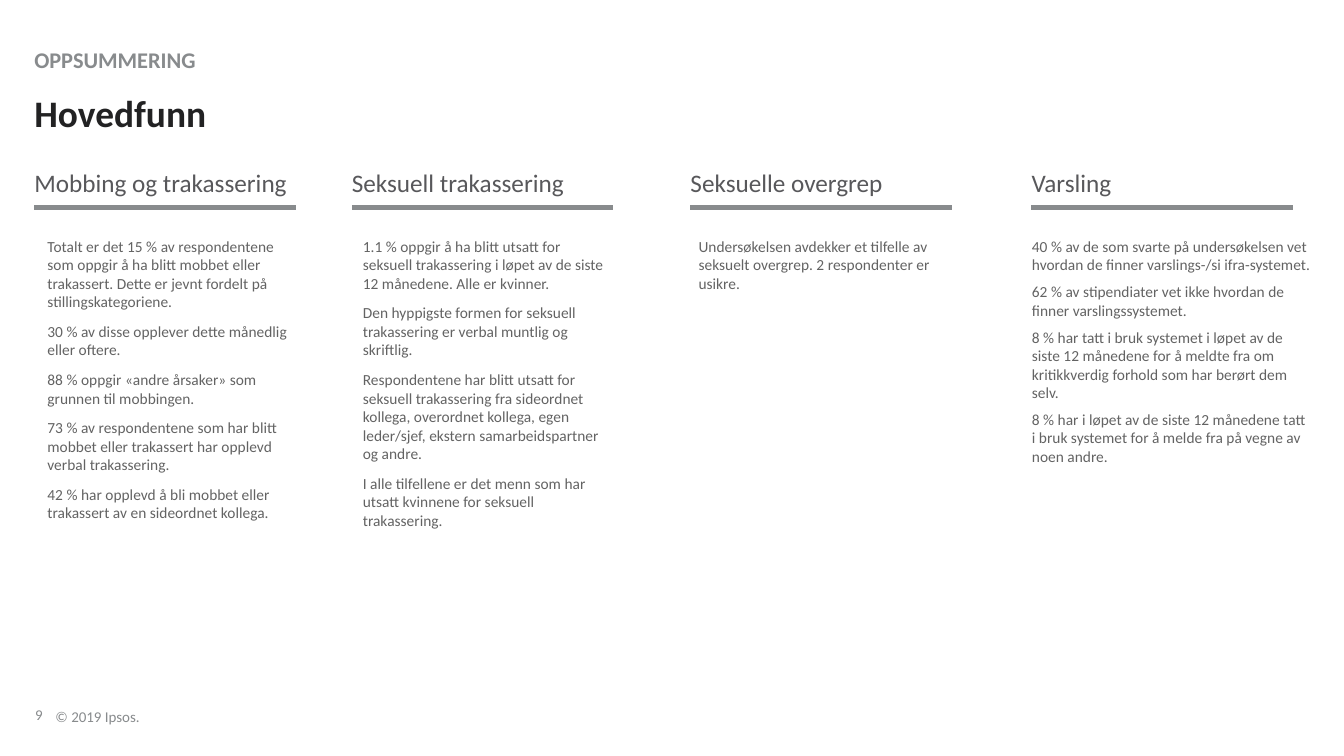
"""Build a summary slide with four columns of main findings."""
from pptx import Presentation, util as u
from pptx.dml.color import RGBColor
from pptx.enum import shapes, text
from pptx.oxml.ns import qn
from lxml import etree

Pt = u.Pt
GREY, DARK, HEAD, BODY = "888B8D", "222223", "58585B", "636363"
TOP, BOTTOM = text.MSO_ANCHOR.TOP, text.MSO_ANCHOR.BOTTOM

LABELS = [
    dict(lines=["9"], box=(25.2, 491.8, 14, 25.2), size=10.7, color=GREY, gap=0, line=0.85, anchor=BOTTOM),
    dict(lines=["© 2019 Ipsos."], box=(39.6, 500.4, 73, 18), size=10.7, color=GREY, gap=0, line=0.85, anchor=BOTTOM),
    dict(lines=["OPPSUMMERING"], box=(24.5, 25.9, 704.2, 46.8), size=16, color=GREY, bold=True,
         inset=(0, 0, 0, 22), anchor=BOTTOM),
    dict(lines=["Hovedfunn"], box=(24.5, 67.7, 826.6, 28.8), size=26.7, color=DARK, bold=True, line=0.9),
]

COLUMNS = [
    dict(head="Mobbing og trakassering", left=24.5, shift=3.6, width=182.9, pad=(5.8, 0, 2.2, 0), gap=4, lines=[
        "Totalt er det 15 % av respondentene som oppgir å ha blitt mobbet eller trakassert. "
        "Dette er jevnt fordelt på stillingskategoriene.",
        "30 % av disse opplever dette månedlig eller oftere.",
        "88 % oppgir «andre årsaker» som grunnen til mobbingen.",
        "73 % av respondentene som har blitt mobbet eller trakassert har opplevd verbal trakassering.",
        "42 % har opplevd å bli mobbet eller trakassert av en sideordnet kollega."]),
    dict(head="Seksuell trakassering", left=251.3, shift=2.1, width=181.4, pad=(5.8, 0, 2.2, 0), gap=4, lines=[
        "1.1 % oppgir å ha blitt utsatt for seksuell trakassering i løpet av de siste 12 månedene. "
        "Alle er kvinner.",
        "Den hyppigste formen for seksuell trakassering er verbal muntlig og skriftlig.",
        "Respondentene har blitt utsatt for seksuell trakassering fra sideordnet kollega, "
        "overordnet kollega, egen leder/sjef, ekstern samarbeidspartner og andre.",
        "I alle tilfellene er det menn som har utsatt kvinnene for seksuell trakassering."]),
    dict(head="Seksuelle overgrep", left=493.2, shift=0, width=182.9, pad=(5.8, 0, 2.2, 0), gap=4, lines=[
        "Undersøkelsen avdekker et tilfelle av seksuelt overgrep. 2 respondenter er usikre."]),
    dict(head="Varsling", left=736.8, shift=-7.4, width=211, pad=(7.7, 0, 2.8, 0), gap=3, lines=[
        "40 % av de som svarte på undersøkelsen vet hvordan de finner varslings-/si ifra-systemet.",
        "62 % av stipendiater vet ikke hvordan de finner varslingssystemet.",
        "8 % har tatt i bruk systemet i løpet av de siste 12 månedene for å meldte fra om "
        "kritikkverdig forhold som har berørt dem selv.",
        "8 % har i løpet av de siste 12 månedene tatt i bruk systemet for å melde fra på vegne av noen andre."]),
]
SPAN, HEAD_TOP, RULE_TOP, BODY_TOP = 186.6, 119.5, 148.5, 169.2


def paint(code):
    return RGBColor.from_string(code)


def write(slide, lines, box, size, color, bold=False, gap=0, line=1.0, inset=(0, 0, 0, 0), anchor=TOP):
    frame = slide.shapes.add_textbox(*map(Pt, box)).text_frame
    frame.word_wrap = True
    frame.vertical_anchor = anchor
    (frame.margin_left, frame.margin_top,
     frame.margin_right, frame.margin_bottom) = map(Pt, inset)
    frame.text = "\n".join(lines)
    for i, para in enumerate(frame.paragraphs):
        para.line_spacing = line
        para.space_before = Pt(gap if i else 0)
        para.space_after = Pt(gap)
        for run in para.runs:
            font = run.font
            font.name, font.size, font.bold = "Calibri", Pt(size), bold
            font.color.rgb = paint(color)


def rule(slide, left, top, span):
    line = slide.shapes.add_connector(shapes.MSO_CONNECTOR.STRAIGHT, Pt(left), Pt(top), Pt(left + span), Pt(top))
    line.line.color.rgb = paint(GREY)
    line.line.width = Pt(3.5)
    etree.SubElement(line._element.spPr, qn("a:effectLst"))


def main():
    deck = Presentation()
    deck.slide_width, deck.slide_height = Pt(960), Pt(540)
    slide = deck.slides.add_slide(deck.slide_layouts[6])
    for label in LABELS:
        write(slide, **label)
    for col in COLUMNS:
        left = col["left"]
        write(slide, [col["head"]], (left, HEAD_TOP, SPAN, 26.6), 18, HEAD)
        rule(slide, left, RULE_TOP, SPAN)
        write(slide, col["lines"], (left + col["shift"], BODY_TOP, col["width"], 213), 11, BODY,
              gap=col["gap"], inset=col["pad"])
    deck.save("out.pptx")


if __name__ == "__main__":
    main()
